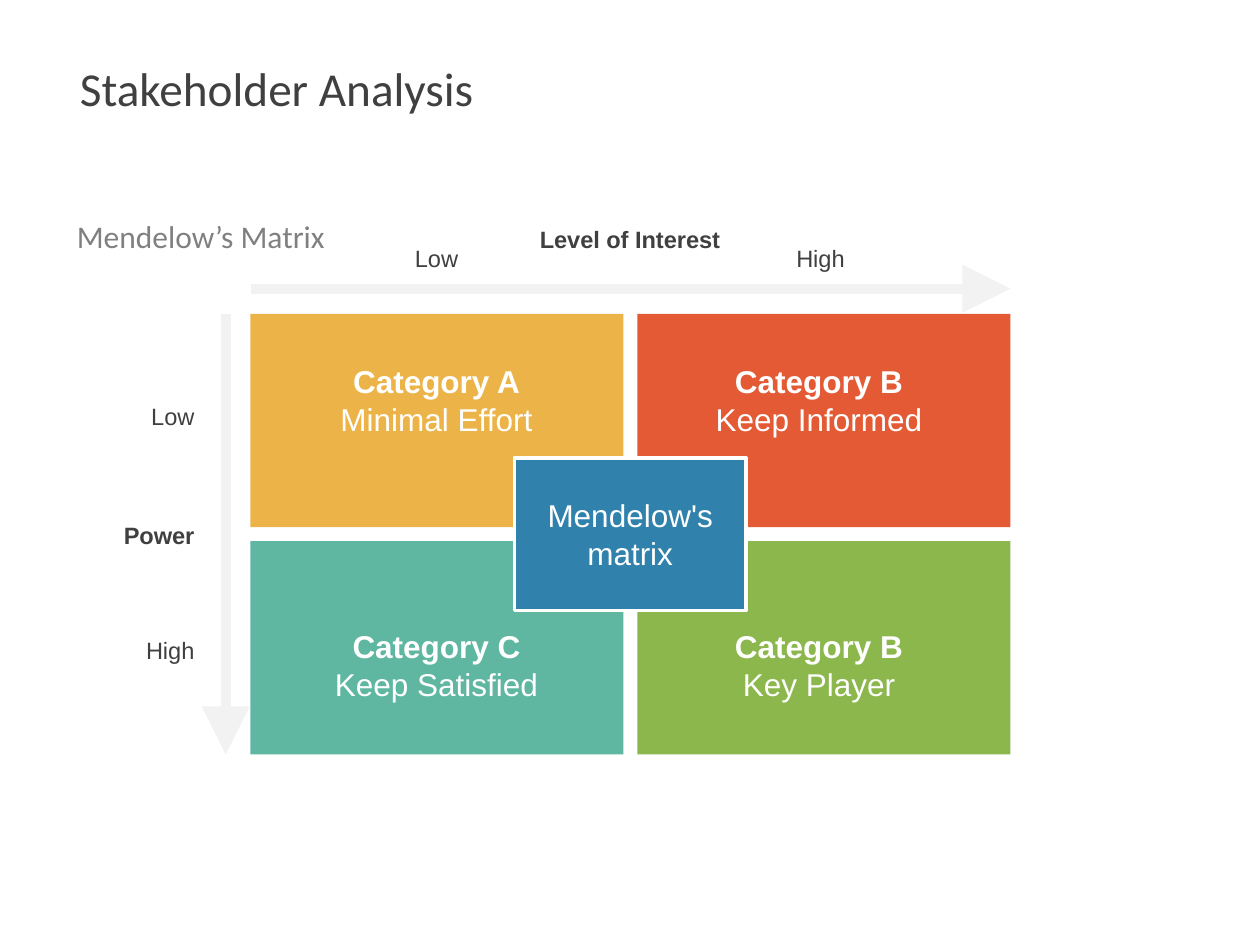
import pptx
import pptx.dml.color
import pptx.enum.shapes
import pptx.enum.text
import pptx.oxml
import pptx.oxml.ns
import pptx.util

Cm = pptx.util.Cm
RGBColor = pptx.dml.color.RGBColor
ALIGN = pptx.enum.text.PP_ALIGN
ANCHOR = pptx.enum.text.MSO_ANCHOR
RECTANGLE = pptx.enum.shapes.MSO_SHAPE.RECTANGLE

WHITE = RGBColor(0xFF, 0xFF, 0xFF)
DARK = RGBColor(0x40, 0x40, 0x40)
GREY = RGBColor(0x80, 0x80, 0x80)
ARROW_GREY = RGBColor(0xF2, 0xF2, 0xF2)
YELLOW = RGBColor(0xEC, 0xB4, 0x48)
ORANGE = RGBColor(0xE3, 0x5A, 0x35)
TEAL = RGBColor(0x5F, 0xB7, 0xA2)
GREEN = RGBColor(0x8B, 0xB7, 0x4C)
BLUE = RGBColor(0x30, 0x81, 0xAC)

TITLE = {"name": "Calibri", "size": pptx.util.Pt(27)}
SUBTITLE = {"name": "Calibri", "size": pptx.util.Pt(18)}
LABEL = {"name": "Arial", "size": pptx.util.Pt(13.5), "bold": False}
AXIS = {**LABEL, "bold": True}
CATEGORY = {"name": "Arial", "size": pptx.util.Pt(18), "bold": False}
CATEGORY_NAME = {**CATEGORY, "bold": True}


def write_lines(shape, lines, color, alignment):
    """Fill a shape with one paragraph for each (text, font format) pair."""
    frame = shape.text_frame
    for index, (text, font_format) in enumerate(lines):
        para = frame.add_paragraph() if index else frame.paragraphs[0]
        para.alignment = alignment
        span = para.add_run()
        span.text = text
        span.font.color.rgb = color
        for name, value in font_format.items():
            setattr(span.font, name, value)


def add_text(left, top, width, height, lines, color=DARK, alignment=ALIGN.CENTER):
    box = slide.shapes.add_textbox(Cm(left), Cm(top), Cm(width), Cm(height))
    box.text_frame.word_wrap = False
    box.text_frame.auto_size = pptx.enum.text.MSO_AUTO_SIZE.SHAPE_TO_FIT_TEXT
    write_lines(box, lines, color, alignment)


deck = pptx.Presentation()
deck.slide_width, deck.slide_height = Cm(25.4), Cm(19.05)
slide = deck.slides.add_slide(deck.slide_layouts[6])

# Title
title = slide.shapes.add_textbox(Cm(1.27), Cm(0.77), Cm(22.86), Cm(1.98))
title_format = {
    "word_wrap": True, "vertical_anchor": ANCHOR.MIDDLE,
    "margin_left": Cm(0.34), "margin_right": Cm(0.34),
    "margin_top": Cm(0.17), "margin_bottom": Cm(0.17),
}
for name, value in title_format.items():
    setattr(title.text_frame, name, value)
write_lines(title, [("Stakeholder Analysis", TITLE)], DARK, ALIGN.LEFT)

# Quadrants
left, top, width, height, gap = 5.05, 6.33, 7.52, 4.3, 0.28
quadrants = [
    (0, 0, YELLOW), (0, 1, TEAL), (1, 0, ORANGE), (1, 1, GREEN),
]
for column, row, color in quadrants:
    quadrant = slide.shapes.add_shape(
        RECTANGLE, Cm(left + column * (width + gap)),
        Cm(top + row * (height + gap)), Cm(width), Cm(height))
    quadrant.shadow.inherit = False
    quadrant.fill.solid()
    quadrant.fill.fore_color.rgb = color
    quadrant.line.fill.background()

# Centre of the matrix
center = slide.shapes.add_shape(RECTANGLE, Cm(10.37), Cm(9.23), Cm(4.67), Cm(3.08))
center.shadow.inherit = False
center.fill.solid()
center.fill.fore_color.rgb = BLUE
center.line.color.rgb = WHITE
center.line.width = pptx.util.Pt(2)
center.text_frame.word_wrap = True
center.text_frame.vertical_anchor = ANCHOR.MIDDLE
write_lines(center, [("Mendelow's matrix", CATEGORY)], WHITE, ALIGN.CENTER)

# Axis labels: interest is centred on x, power ends at a common right edge
for text, middle, label_top, label_width, font_format in [
    ("Low", 8.8, 4.8, 1.4, LABEL),
    ("High", 16.54, 4.8, 1.5, LABEL),
    ("Level of Interest", 12.7, 4.4, 4.2, AXIS),
]:
    add_text(middle - label_width / 2, label_top, label_width, 0.83,
             [(text, font_format)])

power_right = 4.17
for text, label_top, label_width, font_format in [
    ("Power", 10.37, 1.95, AXIS),
    ("Low", 7.97, 1.4, LABEL),
    ("High", 12.7, 1.5, LABEL),
]:
    add_text(power_right - label_width, label_top, label_width, 0.83,
             [(text, font_format)], alignment=ALIGN.RIGHT)

# Category captions
for name, strategy, middle, caption_top, caption_width in [
    ("Category A", "Minimal Effort", 8.8, 7.18, 4.42),
    ("Category B", "Keep Informed", 16.51, 7.18, 4.72),
    ("Category C", "Keep Satisfied", 8.8, 12.52, 4.65),
    ("Category B", "Key Player", 16.51, 12.52, 3.94),
]:
    add_text(middle - caption_width / 2, caption_top, caption_width, 1.8,
             [(name, CATEGORY_NAME), (strategy, CATEGORY)], WHITE)

add_text(1.3, 4.25, 5.56, 1.02, [("Mendelow’s Matrix", SUBTITLE)], GREY, ALIGN.LEFT)

# Axis arrows
right = left + 2 * width + gap
bottom = top + 2 * height + gap
for start_x, start_y, end_x, end_y in [
    (4.55, top, 4.55, bottom),
    (left, 5.82, right, 5.82),
]:
    arrow = slide.shapes.add_connector(
        pptx.enum.shapes.MSO_CONNECTOR.STRAIGHT,
        Cm(start_x), Cm(start_y), Cm(end_x), Cm(end_y))
    arrow.line.color.rgb = ARROW_GREY
    arrow.line.width = pptx.util.Pt(5.5)
    properties = arrow.element.spPr
    head = pptx.oxml.parse_xml(
        f'<a:tailEnd {pptx.oxml.ns.nsdecls("a")} type="triangle" w="lg" len="lg"/>')
    properties.find(pptx.oxml.ns.qn("a:ln")).append(head)
    properties.append(pptx.oxml.parse_xml(
        f'<a:effectLst {pptx.oxml.ns.nsdecls("a")}/>'))

deck.save("out.pptx")
